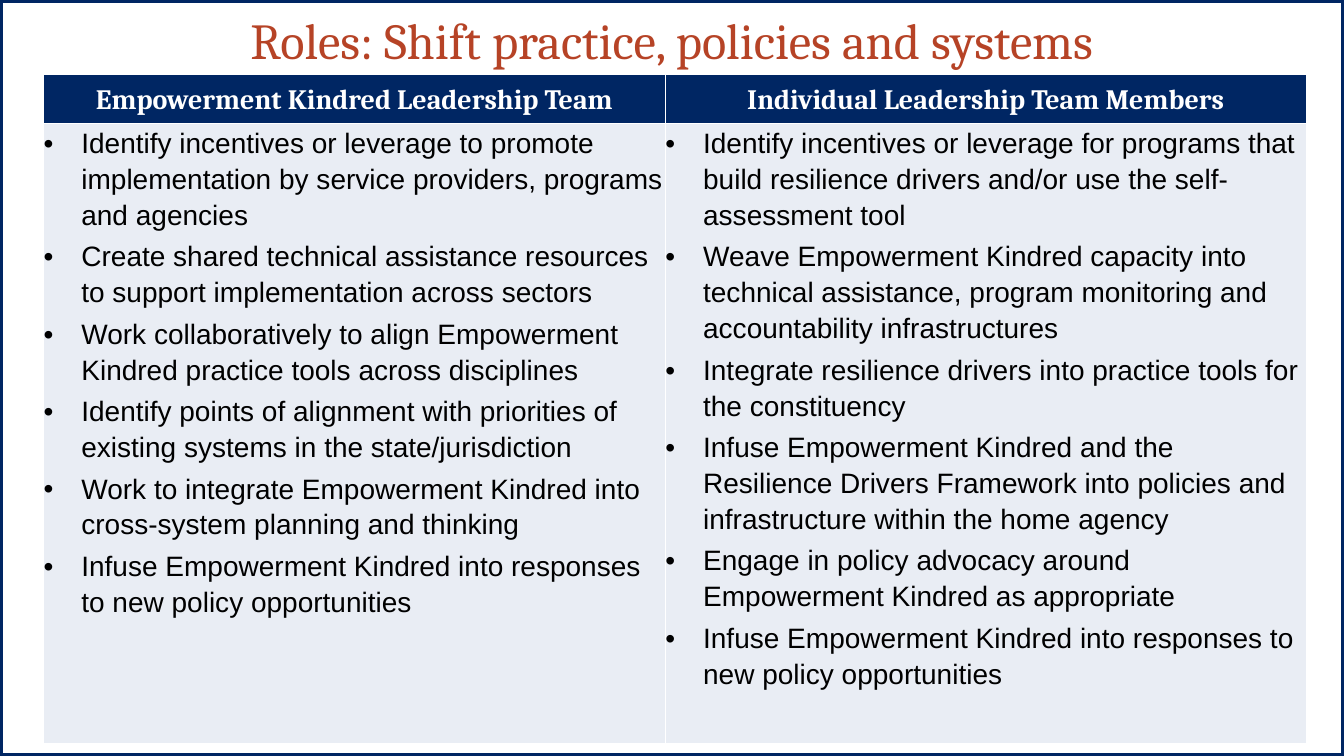
from lxml.etree import SubElement
from pptx import Presentation
from pptx.dml.color import RGBColor
from pptx.enum.shapes import MSO_SHAPE as Shape
from pptx.enum.text import MSO_ANCHOR as Anchor, PP_ALIGN as Align
from pptx.oxml.ns import qn
from pptx.util import Cm, Pt

NAVY = RGBColor(0x00, 0x26, 0x63)
RUST = RGBColor(0xB6, 0x43, 0x26)
PALE = RGBColor(0xE9, 0xED, 0xF4)
WHITE = RGBColor(0xFF, 0xFF, 0xFF)
BLACK = RGBColor(0x00, 0x00, 0x00)

TITLE = "Roles: Shift practice, policies and systems"
ROLES = {
    "Empowerment Kindred Leadership Team": [
        "Identify incentives or leverage to promote implementation by service providers, programs and agencies",
        "Create shared technical assistance resources to support implementation across sectors",
        "Work collaboratively to align Empowerment Kindred practice tools across disciplines",
        "Identify points of alignment with priorities of existing systems in the state/jurisdiction",
        "Work to integrate Empowerment Kindred into cross-system planning and thinking",
        "Infuse Empowerment Kindred into responses to new policy opportunities",
    ],
    "Individual Leadership Team Members": [
        "Identify incentives or leverage for programs that build resilience drivers and/or use the self-assessment tool",
        "Weave Empowerment Kindred capacity into technical assistance, program monitoring and accountability infrastructures",
        "Integrate resilience drivers into practice tools for the constituency",
        "Infuse Empowerment Kindred and the Resilience Drivers Framework into policies and infrastructure within the home agency",
        "Engage in policy advocacy around Empowerment Kindred as appropriate",
        "Infuse Empowerment Kindred into responses to new policy opportunities",
    ],
}
COLUMN_WIDTHS = [Cm(15.67), Cm(16.15)]
ROW_HEIGHTS = [Cm(1.23), Cm(15.64)]
BULLET_INDENT = Cm(0.95)


def style_text(para, font_name, size, color, bold=False):
    for span in para.runs:
        span.font.name = font_name
        span.font.size = Pt(size)
        span.font.bold = bold
        span.font.color.rgb = color


def prepare_cell(cell, text, fill, anchor):
    cell.text_frame.text = text
    cell.fill.solid()
    cell.fill.fore_color.rgb = fill
    cell.vertical_anchor = anchor
    cell.margin_left = cell.margin_right = 0
    cell.margin_top = cell.margin_bottom = 0


deck = Presentation()
deck.slide_width, deck.slide_height = Cm(33.87), Cm(19.05)
page = deck.slides.add_slide(deck.slide_layouts[5])

# Page border
border = page.shapes.add_shape(Shape.RECTANGLE, 0, 0, deck.slide_width, deck.slide_height)
border.shadow.inherit = False
border.fill.background()
border.line.color.rgb = NAVY
border.line.width = Pt(4.5)

# Title
title = page.shapes.title
title.left, title.top, title.width, title.height = Cm(1.69), Cm(0.18), Cm(30.48), Cm(1.6)
title.text_frame.text = TITLE
title.text_frame.vertical_anchor = Anchor.MIDDLE
title.text_frame.paragraphs[0].alignment = Align.CENTER
style_text(title.text_frame.paragraphs[0], "Cambria", 36, RUST)

# Table of roles
table = page.shapes.add_table(
    2, 2, Cm(1.1), Cm(1.88), sum(COLUMN_WIDTHS), sum(ROW_HEIGHTS)
).table
table.first_row = table.horz_banding = False
for row, height in zip(table.rows, ROW_HEIGHTS):
    row.height = height

for index, (heading, duties) in enumerate(ROLES.items()):
    table.columns[index].width = COLUMN_WIDTHS[index]

    # Heading cell
    head = table.cell(0, index)
    prepare_cell(head, heading, NAVY, Anchor.MIDDLE)
    para = head.text_frame.paragraphs[0]
    para.alignment = Align.CENTER
    para.line_spacing = 1.07
    style_text(para, "Cambria", 20, WHITE, bold=True)

    # Bulleted duties
    body = table.cell(1, index)
    prepare_cell(body, "\n".join(duties), PALE, Anchor.TOP)
    for para in body.text_frame.paragraphs:
        para.line_spacing = 1.15
        para.space_after = Pt(4)
        style_text(para, "Arial", 20, BLACK)
        props = para._p.get_or_add_pPr()
        props.set("marL", str(BULLET_INDENT))
        props.set("indent", str(-BULLET_INDENT))
        SubElement(props, qn("a:buFont")).set("typeface", "Arial")
        SubElement(props, qn("a:buChar")).set("char", "•")

deck.save("out.pptx")
